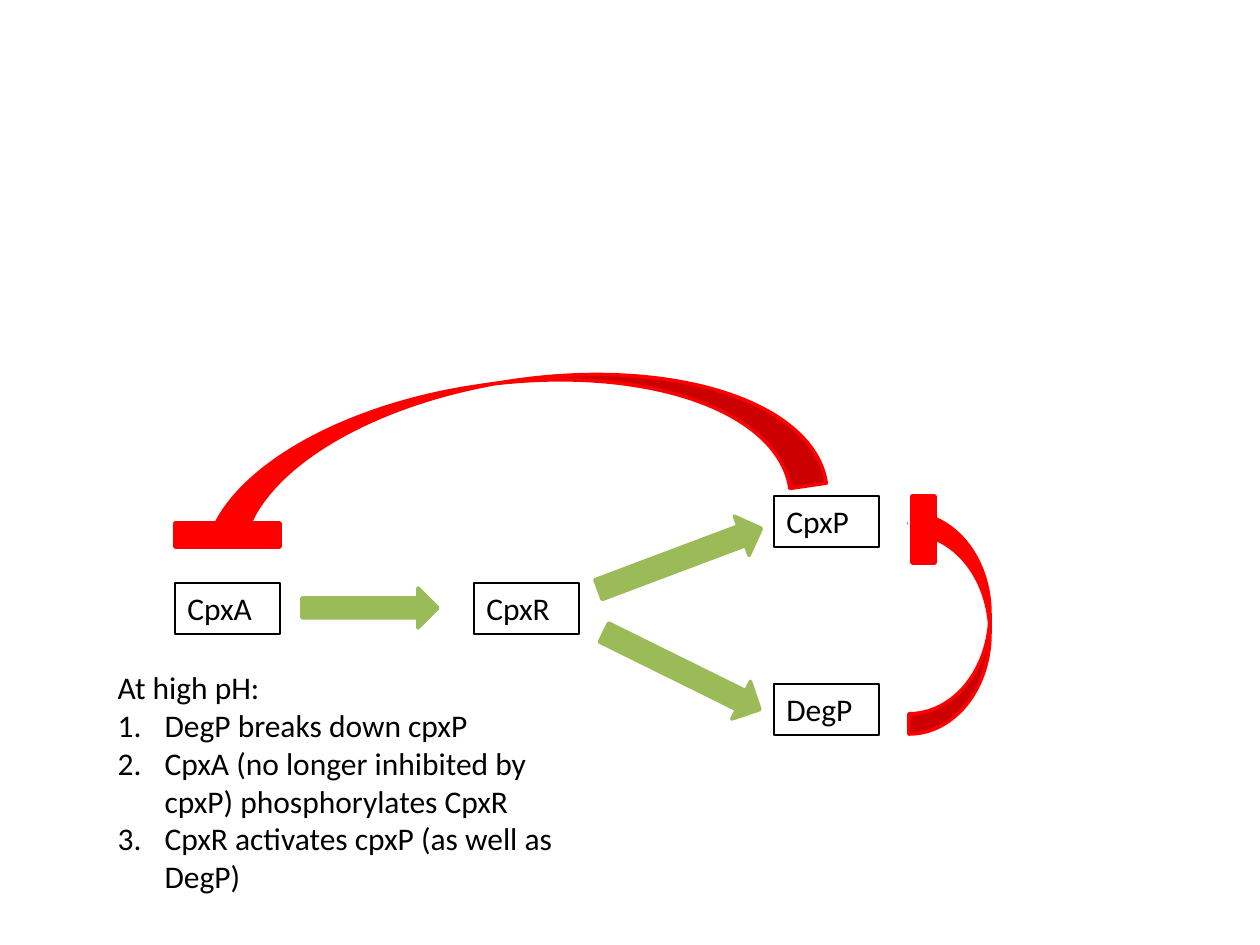
import lxml.etree
import pptx
import pptx.dml.color
import pptx.enum.shapes
import pptx.enum.text
import pptx.oxml.ns
import pptx.util

COLORS = {"ink": "000000", "activation": "9BBB59", "inhibition": "FF0000", "paper": "FFFFFF"}
FONT = "Calibri"
PX = 914400 / 126
SHAPES = pptx.enum.shapes.MSO_SHAPE


def px(length):
    return pptx.util.Emu(round(length * PX))


def rgb(name):
    return pptx.dml.color.RGBColor.from_string(COLORS[name])


def add_part(slide, kind, box, fill, line, line_width, rotation=0):
    part = slide.shapes.add_shape(kind, *map(px, box))
    part.shadow.inherit = False
    part.rotation = rotation
    if fill:
        part.fill.solid()
        part.fill.fore_color.rgb = rgb(fill)
    else:
        part.fill.background()
    part.line.color.rgb = rgb(line)
    part.line.width = pptx.util.Pt(line_width)
    return part


def format_text(frame):
    frame.word_wrap = True
    frame.vertical_anchor = pptx.enum.text.MSO_ANCHOR.TOP
    for paragraph in frame.paragraphs:
        paragraph.alignment = pptx.enum.text.PP_ALIGN.LEFT
        paragraph.space_before = pptx.util.Pt(0)
        for run in paragraph.runs:
            run.font.name = FONT
            run.font.size = pptx.util.Pt(18)
            run.font.color.rgb = rgb("ink")


def add_protein(slide, name, left, top):
    protein = add_part(slide, SHAPES.RECTANGLE, (left, top, 105, 51), None, "ink", 0.75)
    protein.text_frame.text = name
    format_text(protein.text_frame)


def add_pathway(slide, left, top):
    # Proteins
    for name, dx, dy in (("CpxA", 0, 87), ("CpxR", 299, 87), ("DegP", 599, 188), ("CpxP", 599, 0)):
        add_protein(slide, name, left + dx, top + dy)

    # Activation arrows
    for dx, dy, width, height, rotation in (
        (127, 92, 136, 40, 0),
        (418, 42, 174, 42, 339.4),
        (420, 154, 174, 42, 26.3),
    ):
        add_part(slide, SHAPES.RIGHT_ARROW, (left + dx, top + dy, width, height),
                 "activation", "activation", 2, rotation)


def add_inhibition(slide, left, top, arrow, arrow_box, rotation, cover_box, bar_size):
    """Curved arrow whose head is covered and ends in a blunt bar at left, top."""
    def placed(box):
        return left + box[0], top + box[1], box[2], box[3]

    add_part(slide, arrow, placed(arrow_box), "inhibition", "inhibition", 2, rotation)
    add_part(slide, SHAPES.FLOWCHART_PROCESS, placed(cover_box), "paper", "paper", 2)
    add_part(slide, SHAPES.FLOWCHART_PROCESS, (left, top, *bar_size), "inhibition", "inhibition", 2)


def add_explanation(slide, box):
    body = slide.placeholders[1]
    body.left, body.top, body.width, body.height = map(px, box)
    frame = body.text_frame
    frame.text = "\n".join((
        "At high pH:",
        "DegP breaks down cpxP",
        "CpxA (no longer inhibited by cpxP) phosphorylates CpxR",
        "CpxR activates cpxP (as well as DegP)",
    ))
    frame.auto_size = pptx.enum.text.MSO_AUTO_SIZE.NONE
    format_text(frame)

    # Plain heading, then numbered steps
    for index, paragraph in enumerate(frame.paragraphs):
        properties = paragraph._p.get_or_add_pPr()
        indent = px(47) if index else 0
        properties.set("marL", str(indent))
        properties.set("indent", str(-indent))
        if index:
            font = lxml.etree.SubElement(properties, pptx.oxml.ns.qn("a:buFont"))
            font.set("typeface", "+mj-lt")
            number = lxml.etree.SubElement(properties, pptx.oxml.ns.qn("a:buAutoNum"))
            number.set("type", "arabicPeriod")
        else:
            lxml.etree.SubElement(properties, pptx.oxml.ns.qn("a:buNone"))


def main():
    presentation = pptx.Presentation()
    presentation.slide_width = px(1260)
    presentation.slide_height = px(945)
    slide = presentation.slides.add_slide(presentation.slide_layouts[1])
    title = slide.shapes.title
    title.element.getparent().remove(title.element)

    add_pathway(slide, 175, 496)
    # DegP breaks down CpxP
    add_inhibition(slide, 912, 496, SHAPES.CURVED_UP_ARROW, (-78, 82, 231, 81), 270,
                   (-2, -13, 25, 81), (23, 67))
    # CpxP inhibits CpxA
    add_inhibition(slide, 175, 523, SHAPES.CURVED_RIGHT_ARROW, (248, -388, 147, 645), 81.6,
                   (-16, 2, 113, 48), (105, 24))
    add_explanation(slide, (105, 662, 462, 242))
    presentation.save("out.pptx")


if __name__ == "__main__":
    main()
